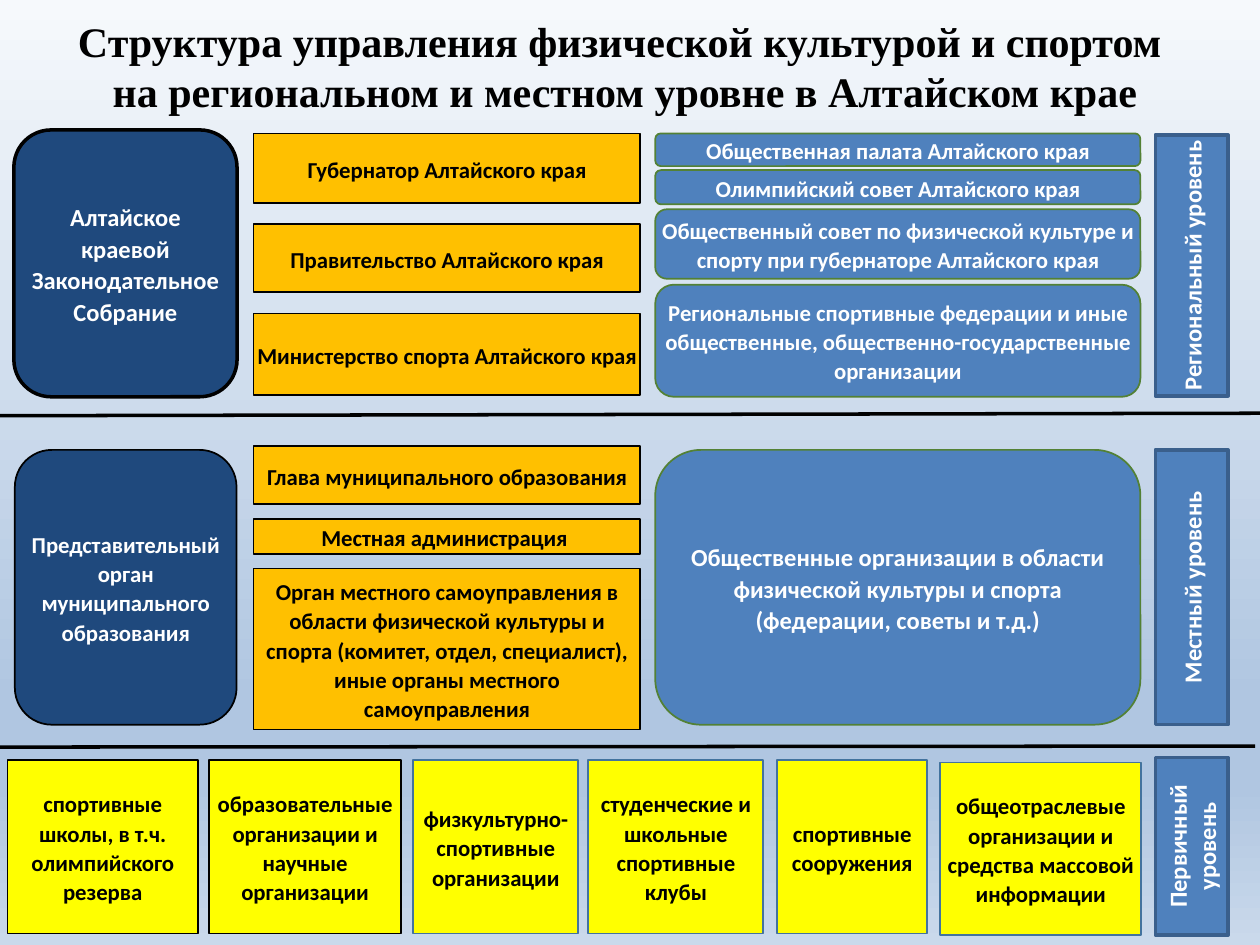
import copy
from dataclasses import dataclass

import pptx
import pptx.dml.color
import pptx.enum.shapes
import pptx.enum.text
import pptx.oxml
import pptx.oxml.ns
import pptx.util

Cm = pptx.util.Cm
Pt = pptx.util.Pt
RGBColor = pptx.dml.color.RGBColor
MSO_SHAPE = pptx.enum.shapes.MSO_SHAPE
qn = pptx.oxml.ns.qn

BLACK = RGBColor(0x00, 0x00, 0x00)
WHITE = RGBColor(0xFF, 0xFF, 0xFF)
NAVY = RGBColor(0x1F, 0x49, 0x7D)
BLUE = RGBColor(0x4F, 0x81, 0xBD)
DARK_BLUE = RGBColor(0x3A, 0x5F, 0x8C)
STEEL = RGBColor(0x43, 0x73, 0x9E)
GREEN = RGBColor(0x53, 0x81, 0x35)
ORANGE = RGBColor(0xFF, 0xC0, 0x00)
YELLOW = RGBColor(0xFF, 0xFF, 0x00)
SKY_STOPS = [
    (0, RGBColor(0xF6, 0xF9, 0xFC)),
    (0.74, RGBColor(0xB0, 0xC6, 0xE1)),
    (0.83, RGBColor(0xB0, 0xC6, 0xE1)),
    (1, RGBColor(0xCA, 0xD9, 0xEB)),
]


@dataclass(frozen=True)
class Style:
    outline: MSO_SHAPE
    fill: RGBColor
    line: RGBColor
    text: RGBColor
    line_width: float = 1
    line_spacing: float = 1.07
    vertical: bool = False


@dataclass(frozen=True)
class Box:
    text: str
    left: float
    top: float
    width: float
    height: float
    style: Style
    size: int = 13
    space_after: int = 8
    padded: bool = False


@dataclass(frozen=True)
class Divider:
    left: float
    left_y: float
    right: float
    right_y: float


ASSEMBLY = Style(MSO_SHAPE.ROUNDED_RECTANGLE, NAVY, BLACK, WHITE, line_width=2)
COUNCIL = Style(MSO_SHAPE.ROUNDED_RECTANGLE, NAVY, BLACK, WHITE)
AUTHORITY = Style(MSO_SHAPE.RECTANGLE, ORANGE, BLACK, BLACK)
PUBLIC = Style(MSO_SHAPE.ROUNDED_RECTANGLE, BLUE, GREEN, WHITE)
LEVEL = Style(MSO_SHAPE.RECTANGLE, BLUE, DARK_BLUE, WHITE, 2, 1.0, True)
SCHOOL = Style(MSO_SHAPE.RECTANGLE, YELLOW, BLACK, BLACK)
CLUB = Style(MSO_SHAPE.RECTANGLE, YELLOW, STEEL, BLACK)

AUTHORITY_COLUMN = (5.11, 7.8)
PUBLIC_COLUMN = (13.21, 9.78)
LEVEL_COLUMN = (23.29, 1.47)


def stacked(column: tuple[float, float], text: str, top: float, height: float,
            style: Style, **details) -> Box:
    left, width = column
    return Box(text, left, top, width, height, style, **details)


REPRESENTATIVES = [
    Box("Алтайское краевой Законодательное Собрание",
        0.28, 2.62, 4.5, 5.38, ASSEMBLY, size=14),
    Box("Представительный орган муниципального образования",
        0.3, 9.07, 4.47, 5.54, COUNCIL),
]
AUTHORITIES = [
    stacked(AUTHORITY_COLUMN, "Губернатор Алтайского края", 2.69, 1.4, AUTHORITY),
    stacked(AUTHORITY_COLUMN, "Правительство Алтайского края", 4.52, 1.37, AUTHORITY),
    stacked(AUTHORITY_COLUMN, "Министерство спорта Алтайского края", 6.32, 1.65, AUTHORITY),
    stacked(AUTHORITY_COLUMN, "Глава муниципального образования", 8.99, 1.17, AUTHORITY,
            padded=True),
    stacked(AUTHORITY_COLUMN, "Местная администрация ", 10.46, 0.71, AUTHORITY),
    stacked(AUTHORITY_COLUMN,
            "Орган местного самоуправления в области физической культуры и спорта "
            "(комитет, отдел, специалист), иные органы местного самоуправления",
            11.46, 3.25, AUTHORITY, space_after=0, padded=True),
]
PUBLIC_BODIES = [
    stacked(PUBLIC_COLUMN, "Общественная палата Алтайского края", 2.69, 0.66, PUBLIC,
            space_after=0),
    stacked(PUBLIC_COLUMN, "Олимпийский совет Алтайского края", 3.43, 0.69, PUBLIC,
            space_after=0, padded=True),
    stacked(PUBLIC_COLUMN,
            "Общественный совет по физической культуре и спорту "
            "при губернаторе Алтайского края", 4.22, 1.4, PUBLIC),
    stacked(PUBLIC_COLUMN,
            "Региональные спортивные федерации и иные общественные, "
            "общественно-государственные организации", 5.74, 2.26, PUBLIC),
    stacked(PUBLIC_COLUMN,
            "Общественные организации в области физической культуры и спорта "
            "(федерации, советы и т.д.)", 9.07, 5.54, PUBLIC,
            size=14, space_after=0, padded=True),
]
LEVELS = [
    stacked(LEVEL_COLUMN, text, top, height, LEVEL, size=14, space_after=0)
    for text, top, height in [
        ("Региональный уровень", 2.72, 5.26),
        ("Местный уровень", 9.07, 5.54),
        ("Первичный уровень", 15.27, 3.58),
    ]
]
PRIMARY_UNITS = [
    Box(text, left, 15.32, width, 3.5, style)
    for text, left, width, style in [
        ("спортивные школы, в т.ч. олимпийского резерва", 0.15, 3.84, SCHOOL),
        ("образовательные организации и научные организации", 4.22, 3.86, SCHOOL),
        ("физкультурно-спортивные организации", 8.33, 3.33, CLUB),
        ("студенческие и школьные спортивные клубы", 11.86, 3.53, CLUB),
        ("спортивные сооружения", 15.67, 3.02, CLUB),
    ]
] + [
    Box("общеотраслевые организации и средства массовой информации",
        18.95, 15.37, 4.06, 3.48, CLUB),
]
DIVIDERS = [Divider(0, 8.38, 25.4, 8.33), Divider(-0.1, 15.06, 25.3, 15.04)]


def paint_background(slide: pptx.slide.Slide) -> None:
    fill = slide.background.fill
    fill.gradient()
    fill.gradient_angle = 270
    stop_list = slide.element.find(".//" + qn("a:gsLst"))
    for _ in SKY_STOPS[2:]:
        stop_list.append(copy.deepcopy(stop_list[-1]))
    for stop, (position, color) in zip(fill.gradient_stops, SKY_STOPS):
        stop.position = position
        stop.color.rgb = color


def format_text(frame: pptx.text.text.TextFrame, font_name: str, size: int,
                color: RGBColor) -> None:
    frame.word_wrap = True
    frame.vertical_anchor = pptx.enum.text.MSO_ANCHOR.MIDDLE
    for paragraph in frame.paragraphs:
        paragraph.alignment = pptx.enum.text.PP_ALIGN.CENTER
        for run in paragraph.runs:
            run.font.name = font_name
            run.font.size = Pt(size)
            run.font.bold = True
            run.font.color.rgb = color


def write_title(slide: pptx.slide.Slide) -> None:
    title = slide.shapes.title
    title.left, title.top, title.width, title.height = Cm(0.1), Cm(0.48), Cm(25), Cm(1.68)
    title.text_frame.text = ("Структура управления физической культурой и спортом \v"
                             "на региональном и местном уровне в Алтайском крае")
    format_text(title.text_frame, "Times New Roman", 24, BLACK)


def draw_box(slide: pptx.slide.Slide, box: Box) -> None:
    style = box.style
    shape = slide.shapes.add_shape(style.outline, Cm(box.left), Cm(box.top),
                                   Cm(box.width), Cm(box.height))
    shape.shadow.inherit = False
    shape.fill.solid()
    shape.fill.fore_color.rgb = style.fill
    shape.line.color.rgb = style.line
    shape.line.width = Pt(style.line_width)
    frame = shape.text_frame
    frame.text = box.text
    format_text(frame, "Calibri", box.size, style.text)
    frame.paragraphs[0].line_spacing = style.line_spacing
    frame.paragraphs[0].space_after = Pt(box.space_after)
    if not box.padded:
        frame.margin_left = frame.margin_right = Cm(0)
        frame.margin_top = frame.margin_bottom = Cm(0)
    if style.vertical:
        shape.element.find(".//" + qn("a:bodyPr")).set("vert", "vert270")


def draw_divider(slide: pptx.slide.Slide, divider: Divider) -> None:
    line = slide.shapes.add_connector(
        pptx.enum.shapes.MSO_CONNECTOR.STRAIGHT, Cm(divider.left), Cm(divider.left_y),
        Cm(divider.right), Cm(divider.right_y))
    line.line.color.rgb = BLACK
    line.line.width = Pt(2)
    line.element.spPr.append(pptx.oxml.parse_xml(
        '<a:effectLst xmlns:a="http://schemas.openxmlformats.org/drawingml/2006/main"/>'))


def main() -> None:
    deck = pptx.Presentation()
    deck.slide_width, deck.slide_height = Cm(25.4), Cm(19.05)
    slide = deck.slides.add_slide(deck.slide_layouts[5])
    paint_background(slide)
    write_title(slide)
    for box in REPRESENTATIVES + AUTHORITIES + PUBLIC_BODIES + LEVELS + PRIMARY_UNITS:
        draw_box(slide, box)
    for divider in DIVIDERS:
        draw_divider(slide, divider)
    deck.save("out.pptx")


if __name__ == "__main__":
    main()
